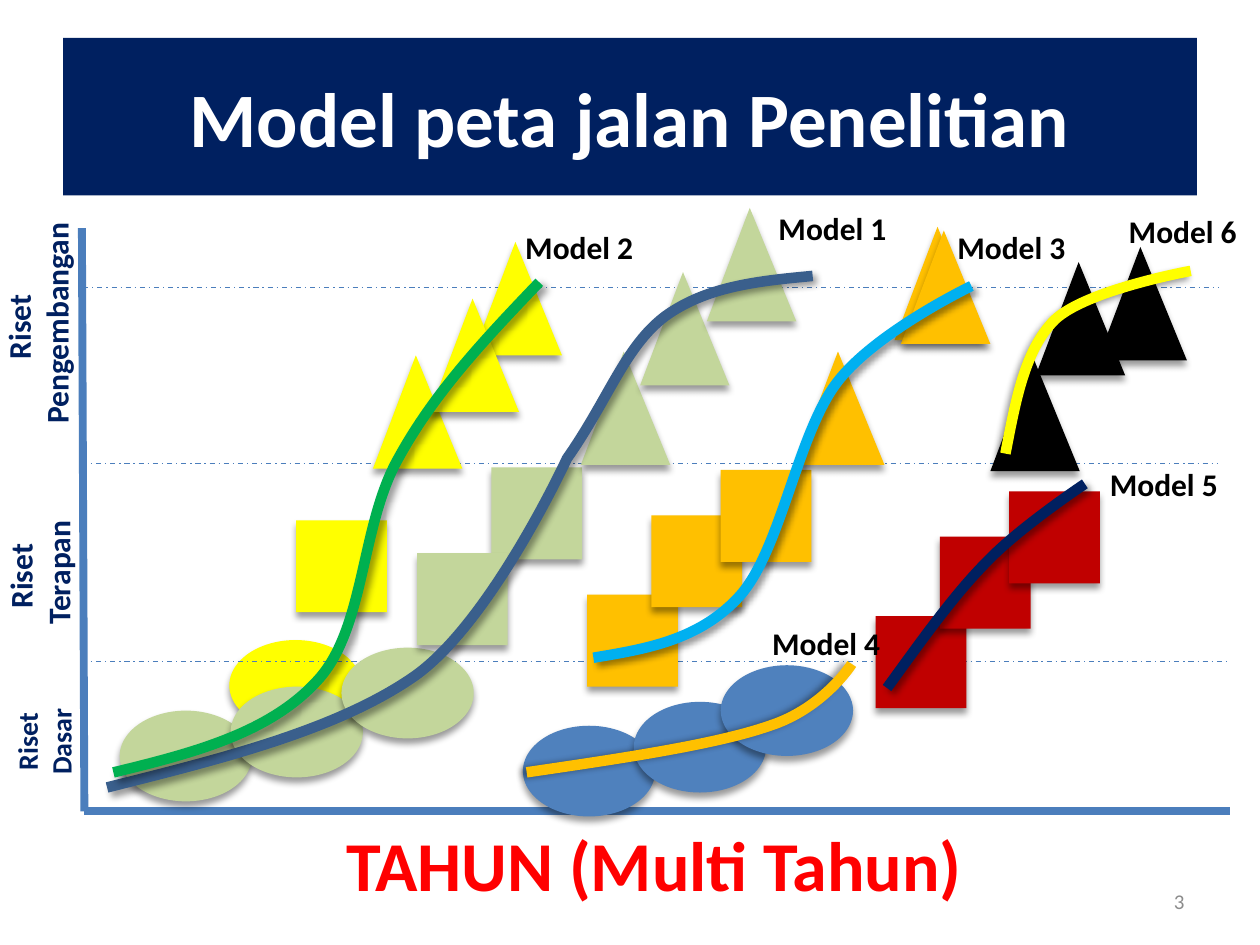
from lxml.etree import SubElement
from pptx import Presentation
from pptx.dml.color import RGBColor
from pptx.enum.dml import MSO_LINE as Dash
from pptx.enum.shapes import MSO_CONNECTOR as Conn, MSO_SHAPE as Kind
from pptx.enum.text import MSO_ANCHOR as Anchor, MSO_AUTO_SIZE as Fit, PP_ALIGN as Align
from pptx.oxml.ns import qn
from pptx.util import Inches, Pt

NAVY = RGBColor(0x00, 0x20, 0x60)
WHITE = RGBColor(0xFF, 0xFF, 0xFF)
BLACK = RGBColor(0x00, 0x00, 0x00)
RED = RGBColor(0xFF, 0x00, 0x00)
GREY = RGBColor(0x8C, 0x8C, 0x8C)
AXIS = RGBColor(0x4B, 0x7E, 0xBC)
BLUE = RGBColor(0x4F, 0x81, 0xBD)
STEEL = RGBColor(0x3A, 0x5F, 0x8C)
SKY = RGBColor(0x00, 0xB0, 0xF0)
SAGE = RGBColor(0xC3, 0xD6, 0x9B)
GREEN = RGBColor(0x00, 0xB0, 0x50)
YELLOW = RGBColor(0xFF, 0xFF, 0x00)
GOLD = RGBColor(0xFF, 0xC0, 0x00)
MAROON = RGBColor(0xC0, 0x00, 0x00)

OVAL, BOX, PEAK = Kind.OVAL, Kind.RECTANGLE, Kind.ISOSCELES_TRIANGLE
SIZES = {OVAL: (1.05, 0.72), BOX: (0.72, 0.73), PEAK: (0.71, 0.9)}

MARKS = [
    (OVAL, YELLOW, [(1.82, 5.08)]),
    (OVAL, SAGE, [(0.95, 5.64), (1.83, 5.45), (2.71, 5.14)]),
    (BOX, SAGE, [(3.9, 3.71), (3.31, 4.39)]),
    (PEAK, SAGE, [(4.61, 2.79), (5.08, 2.16), (5.61, 1.65)]),
    (BOX, YELLOW, [(2.35, 4.13)]),
    (PEAK, YELLOW, [(2.96, 2.82), (3.75, 1.92), (3.41, 2.37)]),
    (BOX, GOLD, [(4.66, 4.72), (5.17, 4.09), (5.72, 3.73)]),
    (PEAK, GOLD, [(6.31, 2.79), (7.1, 1.8), (7.15, 1.83)]),
    (PEAK, BLACK, [(7.86, 2.84), (8.22, 2.08), (8.71, 1.96)]),
    (OVAL, BLUE, [(4.15, 5.76), (5.03, 5.57), (5.72, 5.28)]),
    (BOX, MAROON, [(6.95, 4.89), (7.46, 4.26), (8.01, 3.9)]),
]

CURVES = [
    (STEEL, 45, [(0.85, 6.25), (1.77, 6.02), (2.69, 5.79), (3.3, 5.36),
                 (3.91, 4.92), (4.5, 3.64), (4.5, 3.64),
                 (4.83, 3.17), (4.96, 2.75), (5.28, 2.51),
                 (5.61, 2.27), (6.03, 2.23), (6.45, 2.19)]),
    (GREEN, 45, [(0.9, 6.13), (1.52, 5.98), (2.14, 5.82), (2.52, 5.4),
                 (2.9, 4.99), (2.86, 4.17), (3.16, 3.64),
                 (3.45, 3.11), (3.86, 2.68), (4.28, 2.24)]),
    (SKY, 45, [(4.71, 5.22), (5.13, 5.15), (5.56, 5.08), (5.88, 4.72),
               (6.2, 4.35), (6.33, 3.45), (6.64, 3.04),
               (6.94, 2.64), (7.71, 2.27), (7.71, 2.27)]),
    (GOLD, 180, [(4.18, 6.13), (4.93, 6.02), (5.68, 5.91), (6.11, 5.76),
                 (6.54, 5.62), (6.76, 5.27), (6.76, 5.27)]),
    (NAVY, 45, [(7.04, 5.46), (7.31, 5.09), (7.57, 4.72), (7.84, 4.45),
                (8.1, 4.18), (8.61, 3.84), (8.61, 3.84)]),
    (YELLOW, 135, [(7.98, 3.6), (8.06, 3.19), (8.13, 2.78), (8.37, 2.54),
                   (8.62, 2.3), (9.45, 2.15), (9.45, 2.15)]),
]

LABELS = [(6.08, 1.61), (4.07, 1.76), (7.5, 1.76), (6.03, 4.9), (8.71, 3.64), (8.86, 1.63)]

STAGES = [
    ("Riset \nDasar ", (-0.26, 5.54, 1.22, 0.64), 16),
    ("Riset \nTerapan", (-0.39, 4.19, 1.41, 0.71), 18),
    ("Riset \nPengembangan", (-0.85, 2.21, 2.3, 0.71), 18),
]


def write(frame, text, size=18, color=BLACK, bold=True, align=Align.LEFT, anchor=Anchor.TOP):
    """Fill a text frame with formatted lines."""
    frame.word_wrap = True
    frame.vertical_anchor = anchor
    frame.text = text
    for para in frame.paragraphs:
        para.alignment = align
        font = para.runs[0].font
        font.name, font.size, font.bold = "Calibri", Pt(size), bold
        font.color.rgb = color


def label(slide, text, spot, turn=0, **form):
    """Add a text box, turned if asked."""
    box = slide.shapes.add_textbox(*map(Inches, spot))
    box.rotation = turn
    write(box.text_frame, text, **form)
    box.text_frame.auto_size = Fit.SHAPE_TO_FIT_TEXT


def shade(shape, angle):
    """Give a shape a soft outer shadow."""
    shape.shadow.inherit = False
    effects = shape._element.spPr.find(qn("a:effectLst"))
    outer = SubElement(effects, qn("a:outerShdw"), blurRad=str(Pt(4)), dist=str(Pt(3)),
                       dir=str(angle * 60000), rotWithShape="0")
    tone = SubElement(outer, qn("a:srgbClr"), val=str(BLACK))
    SubElement(tone, qn("a:alpha"), val="40000")


def mark(slide, kind, color, spot):
    """Add one research step in its stage's shape."""
    shape = slide.shapes.add_shape(kind, *map(Inches, spot + SIZES[kind]))
    if kind == PEAK:
        shape.adjustments[0] = 0.48
    shape.fill.solid()
    shape.fill.fore_color.rgb = color
    shape.line.fill.background()
    shade(shape, 90)


def rule(slide, start, end, width, dash=None):
    """Add a straight axis or grid line."""
    line = slide.shapes.add_connector(Conn.STRAIGHT, *map(Inches, start + end))
    line.line.dash_style = dash
    line.line.color.rgb = AXIS
    line.line.width = Pt(width)
    SubElement(line._element.spPr, qn("a:effectLst"))


def bend(shape):
    """Turn each three line segments of an outline into one cubic curve."""
    track = next(shape._element.iter(qn("a:path")))
    legs = track.findall(qn("a:lnTo"))
    for i in range(0, len(legs), 3):
        cubic = SubElement(track, qn("a:cubicBezTo"))
        for leg in legs[i:i + 3]:
            cubic.append(leg[0])
            track.remove(leg)


def curve(slide, color, angle, knots):
    """Draw one model's growth curve."""
    first, *rest = [(Inches(x), Inches(y)) for x, y in knots]
    pen = slide.shapes.build_freeform(*first)
    pen.add_line_segments(rest, close=False)
    shape = pen.convert_to_shape()
    bend(shape)
    shape.fill.background()
    shape.line.color.rgb = color
    shape.line.width = Pt(6)
    shade(shape, angle)


def head(slide, text):
    """Place and colour the title banner."""
    title = slide.shapes.title
    title.left, title.top, title.width, title.height = map(Inches, (0.5, 0.3, 9, 1.25))
    title.fill.solid()
    title.fill.fore_color.rgb = NAVY
    write(title.text_frame, text, size=44, color=WHITE, align=Align.CENTER, anchor=Anchor.MIDDLE)


def main():
    """Build the research road map slide."""
    deck = Presentation()
    deck.slide_width, deck.slide_height = Inches(10), Inches(7.5)
    slide = deck.slides.add_slide(deck.slide_layouts[5])
    head(slide, "Model peta jalan Penelitian")
    mark(slide, OVAL, YELLOW, MARKS[0][2][0])
    rule(slide, (0.65, 1.81), (0.67, 6.44), 4.5)
    rule(slide, (0.67, 6.44), (9.76, 6.44), 4.5)
    for left, y, right in ((0.66, 2.28, 9.67), (0.65, 3.68, 9.67), (0.65, 5.25, 9.76)):
        rule(slide, (left, y), (right, y), 0.75, Dash.DASH_DOT)
    for text, spot, size in STAGES:
        label(slide, text, spot, turn=270, size=size, color=NAVY, align=Align.CENTER)
    label(slide, "TAHUN (Multi Tahun)", (2.34, 6.47, 5.7, 0.77),
          size=40, color=RED, align=Align.CENTER)
    for kind, color, spots in MARKS[1:]:
        for spot in spots:
            mark(slide, kind, color, spot)
    for n, spot in enumerate(LABELS, 1):
        label(slide, f"Model {n}", spot + (1.09, 0.4))
    for color, angle, knots in CURVES:
        curve(slide, color, angle, knots)
    label(slide, "3", (7.17, 6.95, 2.33, 0.4), size=12, color=GREY, bold=False,
          align=Align.RIGHT, anchor=Anchor.MIDDLE)
    deck.save("out.pptx")


if __name__ == "__main__":
    main()
